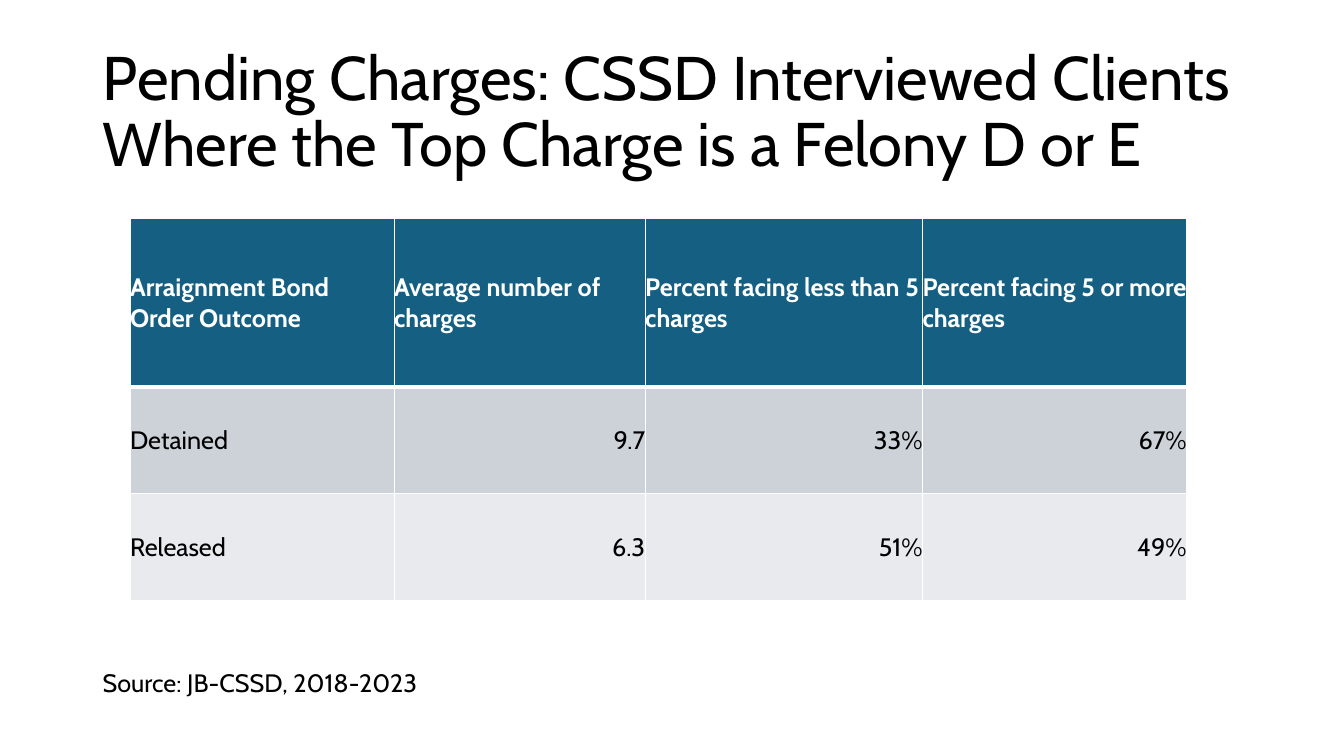
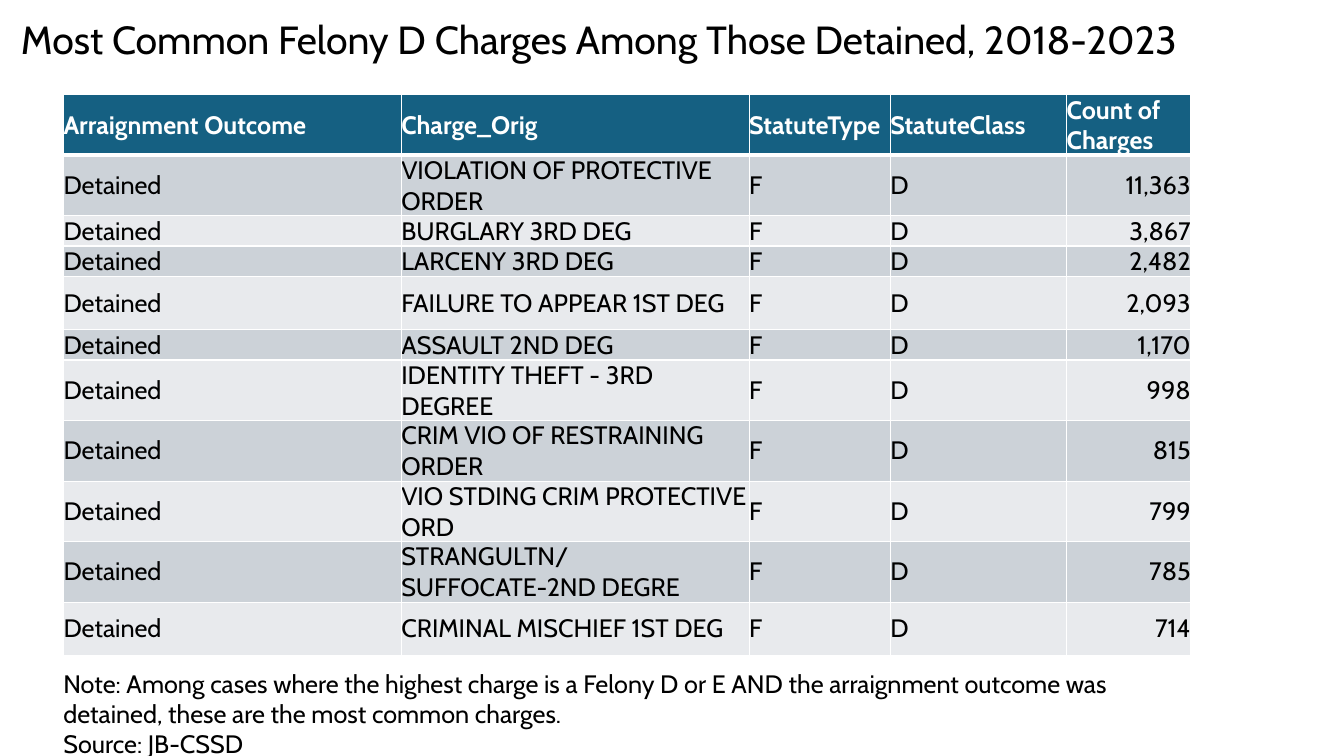
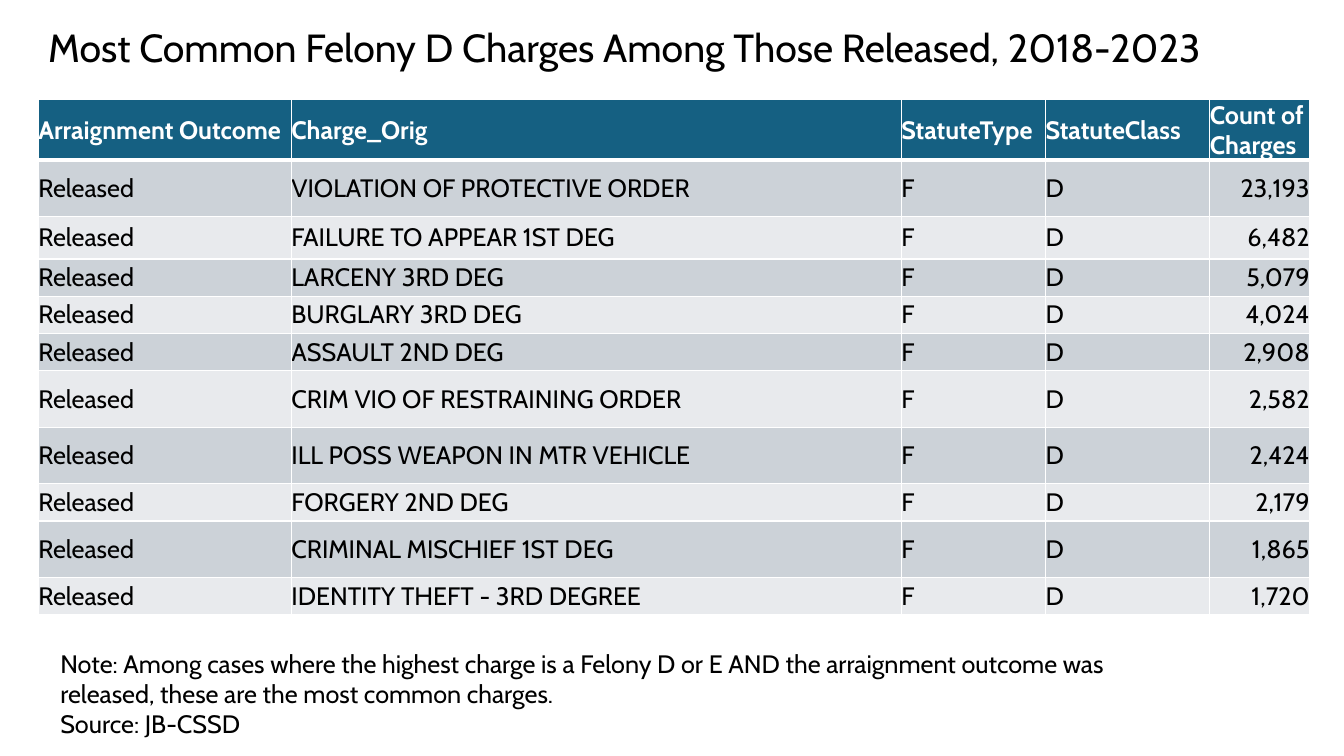
import pptx
import pptx.util
import pptx.dml.color
import pptx.enum.text
import pptx.oxml
import pptx.oxml.ns

Inches = pptx.util.Inches
ALIGN = pptx.enum.text.PP_ALIGN
ANCHOR = pptx.enum.text.MSO_ANCHOR

FONT = "Cabin"
COLORS = {
    "ink": "000000",
    "white": "FFFFFF",
    "head": "156082",
    "odd": "CCD2D8",
    "even": "E8EAED",
}

BOND_HEAD = [
    "Arraignment Bond Order Outcome",
    "Average number of charges",
    "Percent facing less than 5 charges",
    "Percent facing 5 or more charges",
]
BOND_ROWS = [
    ["Detained", "9.7", "33%", "67%"],
    ["Released", "6.3", "51%", "49%"],
]
CHARGE_HEAD = [
    "Arraignment Outcome",
    "Charge_Orig",
    "StatuteType",
    "StatuteClass",
    "Count of Charges",
]
DETAINED = [
    ("VIOLATION OF PROTECTIVE ORDER", 11363),
    ("BURGLARY 3RD DEG", 3867),
    ("LARCENY 3RD DEG", 2482),
    ("FAILURE TO APPEAR 1ST DEG", 2093),
    ("ASSAULT 2ND DEG", 1170),
    ("IDENTITY THEFT - 3RD DEGREE", 998),
    ("CRIM VIO OF RESTRAINING ORDER", 815),
    ("VIO STDING CRIM PROTECTIVE ORD", 799),
    ("STRANGULTN/SUFFOCATE-2ND DEGRE", 785),
    ("CRIMINAL MISCHIEF 1ST DEG", 714),
]
RELEASED = [
    ("VIOLATION OF PROTECTIVE ORDER", 23193),
    ("FAILURE TO APPEAR 1ST DEG", 6482),
    ("LARCENY 3RD DEG", 5079),
    ("BURGLARY 3RD DEG", 4024),
    ("ASSAULT 2ND DEG", 2908),
    ("CRIM VIO OF RESTRAINING ORDER", 2582),
    ("ILL POSS WEAPON IN MTR VEHICLE", 2424),
    ("FORGERY 2ND DEG", 2179),
    ("CRIMINAL MISCHIEF 1ST DEG", 1865),
    ("IDENTITY THEFT - 3RD DEGREE", 1720),
]


def color(name):
    return pptx.dml.color.RGBColor.from_string(COLORS[name])


def write(frame, text, size=18, ink="ink", bold=False, align=ALIGN.LEFT, space=1.0):
    """Fill a text frame, one paragraph for each line of text."""
    frame.word_wrap = True
    for index, line in enumerate(text.split("\n")):
        para = frame.paragraphs[0] if index == 0 else frame.add_paragraph()
        para.alignment = align
        para.line_spacing = space
        run = para.add_run()
        run.text = line
        run.font.name = FONT
        run.font.size = pptx.util.Pt(size)
        run.font.bold = bold
        run.font.color.rgb = color(ink)


def add_box(slide, place, text, anchor=ANCHOR.TOP, **form):
    box = slide.shapes.add_textbox(*map(Inches, place))
    box.text_frame.vertical_anchor = anchor
    write(box.text_frame, text, **form)


def add_title(slide, place, text, size=28):
    add_box(slide, place, text, anchor=ANCHOR.MIDDLE, size=size, space=0.9)


def add_edges(cell, top, bottom):
    """Draw white cell borders; top and bottom are widths in points."""
    props = cell._tc.get_or_add_tcPr()
    widths = {"lnL": 1, "lnR": 1, "lnT": top, "lnB": bottom}
    for index, (tag, width) in enumerate(widths.items()):
        props.insert(index, pptx.oxml.parse_xml(
            f'<a:{tag} {pptx.oxml.ns.nsdecls("a")} w="{pptx.util.Pt(width)}">'
            f'<a:solidFill><a:srgbClr val="{COLORS["white"]}"/></a:solidFill>'
            f'</a:{tag}>'))


def add_grid(slide, place, cols, heights, rows, first):
    """Add a table whose body is right-aligned from column first on."""
    shape = slide.shapes.add_table(len(rows), len(cols), *map(Inches, place))
    table = shape.table
    table.horz_banding = False
    for col, width in zip(table.columns, cols):
        col.width = Inches(width)
    for row, height in zip(table.rows, heights):
        row.height = Inches(height)
    for r, row in enumerate(rows):
        head = r == 0
        fill = "head" if head else "odd" if r % 2 else "even"
        for c, text in enumerate(row):
            cell = table.cell(r, c)
            cell.margin_left = cell.margin_right = 0
            cell.margin_top = cell.margin_bottom = 0
            cell.vertical_anchor = ANCHOR.MIDDLE
            cell.fill.solid()
            cell.fill.fore_color.rgb = color(fill)
            add_edges(cell, top=3 if r == 1 else 1, bottom=3 if head else 1)
            write(cell.text_frame, text, bold=head,
                  ink="white" if head else "ink",
                  align=ALIGN.RIGHT if c >= first and not head else ALIGN.LEFT)


def add_charges(slide, state, counts, place, cols, heights, note):
    """Add the table of felony D charges for one outcome, with its note."""
    body = [[state, charge, "F", "D", f"{count:,}"] for charge, count in counts]
    add_grid(slide, place, cols, heights, [CHARGE_HEAD] + body, first=4)
    add_box(slide, note,
            "Note: Among cases where the highest charge is a Felony D or E AND "
            f"the arraignment outcome was {state.lower()}, these are the most "
            "common charges.\nSource: JB-CSSD")


def main():
    deck = pptx.Presentation()
    deck.slide_width, deck.slide_height = Inches(13.33), Inches(7.5)
    bonds, held, freed = (deck.slides.add_slide(deck.slide_layouts[6])
                          for _ in range(3))

    add_title(bonds, (0.92, 0.4, 11.5, 1.45),
              "Pending Charges: CSSD Interviewed Clients Where the Top Charge "
              "is a Felony D or E", size=44)
    add_grid(bonds, (1.29, 2.17, 10.49, 3.79), [2.62, 2.49, 2.75, 2.62],
             [1.67, 1.06, 1.06], [BOND_HEAD] + BOND_ROWS, first=1)
    add_box(bonds, (0.92, 6.57, 3.92, 0.4), "Source: JB-CSSD, 2018-2023")

    add_title(held, (0.11, -0.31, 12.37, 1.45),
              "Most Common Felony D Charges Among Those Detained, 2018-2023")
    add_charges(held, "Detained", DETAINED, (0.63, 0.94, 11.17, 5.5),
                [3.35, 3.45, 1.4, 1.75, 1.23],
                [0.53, 0.53, 0.27, 0.27, 0.53, 0.27] + [0.53] * 5,
                (0.53, 6.58, 11.36, 1.01))

    add_title(freed, (0.38, -0.23, 12.88, 1.45),
              "Most Common Felony D Charges Among Those Released, 2018-2023")
    add_charges(freed, "Released", RELEASED, (0.38, 0.99, 12.61, 5.11),
                [2.51, 6.05, 1.43, 1.63, 0.99],
                [0.56, 0.56, 0.42, 0.37, 0.37, 0.37,
                 0.56, 0.56, 0.37, 0.56, 0.37],
                (0.5, 6.38, 11.36, 1.01))

    deck.save("out.pptx")


if __name__ == "__main__":
    main()
